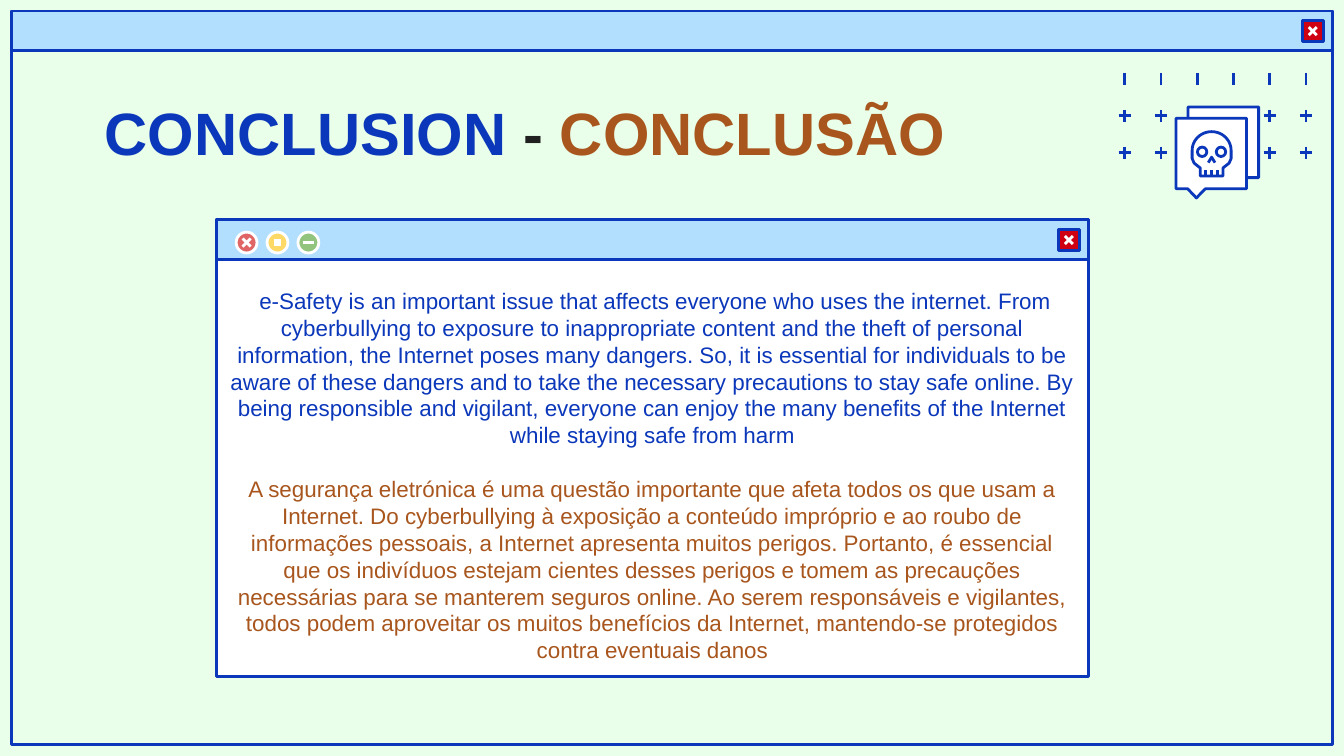
from dataclasses import dataclass
from math import cos, pi, sin

from lxml import etree
from pptx import Presentation
from pptx import util as u
from pptx.dml.color import RGBColor
from pptx.enum import shapes, text
from pptx.oxml.ns import qn


@dataclass(frozen=True)
class Theme:
    font: str = "Arial"
    title_size: float = 32
    body_size: float = 12
    paragraph_gap: float = 14.4
    line_width: float = 1.5
    background: str = "E9FFE9"
    blue: str = "0B37BA"
    sky: str = "B3DFFF"
    brown: str = "A8561D"
    dark: str = "212121"
    white: str = "FFFFFF"
    alert: str = "CF0011"
    red: str = "E06666"
    yellow: str = "FFD966"
    green: str = "93C47D"


THEME = Theme()
COLUMNS, ROWS = 100, 56.25
ENGLISH = (
    " e-Safety is an important issue that affects everyone who uses the internet. "
    "From cyberbullying to exposure to inappropriate content and the theft of personal "
    "information, the Internet poses many dangers. So, it is essential for individuals "
    "to be aware of these dangers and to take the necessary precautions to stay safe "
    "online. By being responsible and vigilant, everyone can enjoy the many benefits of "
    "the Internet while staying safe from harm"
)
PORTUGUESE = (
    "A segurança eletrónica é uma questão importante que afeta todos os que usam a "
    "Internet. Do cyberbullying à exposição a conteúdo impróprio e ao roubo de "
    "informações pessoais, a Internet apresenta muitos perigos. Portanto, é essencial "
    "que os indivíduos estejam cientes desses perigos e tomem as precauções necessárias "
    "para se manterem seguros online. Ao serem responsáveis e vigilantes, todos podem "
    "aproveitar os muitos benefícios da Internet, mantendo-se protegidos contra "
    "eventuais danos"
)


class SlideBuilder:
    def __init__(self, presentation, theme):
        self.theme = theme
        self.column = presentation.slide_width / COLUMNS
        self.row = presentation.slide_height / ROWS
        self.slide = presentation.slides.add_slide(presentation.slide_layouts[5])
        fill = self.slide.background.fill
        fill.solid()
        fill.fore_color.rgb = RGBColor.from_string(theme.background)

    def x(self, columns):
        return u.Emu(round(columns * self.column))

    def y(self, rows):
        return u.Emu(round(rows * self.row))

    def paint(self, shape, fill, line):
        shape.shadow.inherit = False
        if fill:
            shape.fill.solid()
            shape.fill.fore_color.rgb = RGBColor.from_string(fill)
        else:
            shape.fill.background()
        if line:
            shape.line.color.rgb = RGBColor.from_string(line)
            shape.line.width = u.Pt(self.theme.line_width)
        else:
            shape.line.fill.background()
        return shape

    def shape(self, kind, left, top, width, height, fill=None, line=None):
        shape = self.slide.shapes.add_shape(
            kind, self.x(left), self.y(top), self.x(width), self.y(height))
        return self.paint(shape, fill, line)

    def box(self, *place, **style):
        return self.shape(shapes.MSO_SHAPE.RECTANGLE, *place, **style)

    def circle(self, x, y, size, **style):
        return self.shape(
            shapes.MSO_SHAPE.OVAL, x - size / 2, y - size / 2, size, size, **style)

    def callout(self, left, top, size):
        shape = self.shape(
            shapes.MSO_SHAPE.RECTANGULAR_CALLOUT, left, top, size, size,
            fill=self.theme.white, line=self.theme.blue)
        shape.adjustments[0], shape.adjustments[1] = -0.21, 0.63

    def outline(self, points, closed=False, fill=None):
        placed = [(self.x(x), self.y(y)) for x, y in points]
        builder = self.slide.shapes.build_freeform(*placed[0])
        builder.add_line_segments(placed[1:], close=closed)
        self.paint(builder.convert_to_shape(), fill, self.theme.blue)

    def line(self, x1, y1, x2, y2, color):
        connector = self.slide.shapes.add_connector(
            shapes.MSO_CONNECTOR.STRAIGHT, self.x(x1), self.y(y1), self.x(x2), self.y(y2))
        connector.line.color.rgb = RGBColor.from_string(color)
        connector.line.width = u.Pt(self.theme.line_width)
        etree.SubElement(connector._element.spPr, qn("a:effectLst"))

    def cross(self, x, y, reach=0.3):
        for rise in (-reach, reach):
            self.line(x - reach, y - rise, x + reach, y + rise, self.theme.white)

    def window(self, left, top, width, height, fill=None):
        theme = self.theme
        body = self.box(left, top, width, height, fill=fill, line=theme.blue)
        self.box(left, top, width, 2.95, fill=theme.sky, line=theme.blue)
        close_left, close_top = left + width - 2.25, top + 0.72
        self.box(close_left, close_top, 1.55, 1.55, fill=theme.alert, line=theme.blue)
        self.cross(close_left + 0.78, close_top + 0.78)
        return body

    def style_run(self, run, size, color, bold=False):
        run.font.name = self.theme.font
        run.font.size = u.Pt(size)
        run.font.bold = bold
        run.font.color.rgb = RGBColor.from_string(color)

    def title(self, place, parts):
        title = self.slide.shapes.title
        left, top, width, height = place
        title.left, title.top = self.x(left), self.y(top)
        title.width, title.height = self.x(width), self.y(height)
        frame = title.text_frame
        frame.auto_size = text.MSO_AUTO_SIZE.NONE
        frame.vertical_anchor = text.MSO_ANCHOR.TOP
        frame.margin_left = frame.margin_right = self.x(1)
        frame.margin_top = frame.margin_bottom = self.y(1)
        paragraph = frame.paragraphs[0]
        paragraph.alignment = text.PP_ALIGN.LEFT
        for words, color in parts:
            run = paragraph.add_run()
            run.text = words
            self.style_run(run, self.theme.title_size, color, bold=True)

    def body_text(self, shape, parts):
        frame = shape.text_frame
        frame.word_wrap = True
        frame.vertical_anchor = text.MSO_ANCHOR.BOTTOM
        frame.margin_left = frame.margin_right = self.x(1)
        frame.margin_top = frame.margin_bottom = self.y(1)
        frame.text = "\n".join(words for words, _ in parts)
        for index, (paragraph, (_, color)) in enumerate(zip(frame.paragraphs, parts)):
            paragraph.alignment = text.PP_ALIGN.CENTER
            paragraph.space_before = u.Pt(self.theme.paragraph_gap if index else 0)
            self.style_run(paragraph.runs[0], self.theme.body_size, color)

    def plus_grid(self, left, top, column_count, row_count, reach=0.45):
        for row in range(row_count):
            for column in range(column_count):
                x, y = left + 2.7 * column, top + 2.75 * row
                self.line(x, y - reach, x, y + reach, self.theme.blue)
                if row:
                    self.line(x - reach, y, x + reach, y, self.theme.blue)

    def skull(self, x, y):
        theme = self.theme
        dome = [(x - 1.45 * cos(step * pi / 24), y - 1.4 * sin(step * pi / 24))
                for step in range(25)]
        jaw = [(1.45, 0.6), (1.3, 0.95), (0.85, 1.3), (0.85, 1.9)]
        right = [(x + dx, y + dy) for dx, dy in jaw]
        left = [(x - dx, y + dy) for dx, dy in reversed(jaw)]
        self.outline(dome + right + left, closed=True, fill=theme.white)
        for side in (-0.7, 0.7):
            self.circle(x + side, y + 0.1, 0.7, line=theme.blue)
        self.outline([(x - 0.25, y + 0.9), (x, y + 0.5), (x + 0.25, y + 0.9)])
        for tooth in (-0.45, 0, 0.45):
            self.line(x + tooth, y + 1.45, x + tooth, y + 1.9, theme.blue)

    def window_buttons(self, left, y, gap):
        theme = self.theme
        centers = [left + gap * index for index in range(3)]
        for x, color in zip(centers, (theme.red, theme.yellow, theme.green)):
            self.circle(x, y, 1.55, fill=color, line=theme.white)
        close, restore, minimise = centers
        self.cross(close, y)
        self.box(restore - 0.25, y - 0.25, 0.5, 0.5, fill=theme.white)
        self.line(minimise - 0.42, y, minimise + 0.42, y, theme.white)


def main():
    presentation = Presentation()
    presentation.slide_width = u.Inches(10)
    presentation.slide_height = presentation.slide_width * 9 // 16
    builder = SlideBuilder(presentation, THEME)
    builder.window(0.85, 0.82, 98.3, 54.6)
    builder.plus_grid(83.68, 5.87, 6, 3)
    for left, top in ((88.4, 7.97), (87.5, 8.8)):
        builder.callout(left, top, 5.25)
    builder.skull(90.15, 11.2)
    panel = builder.window(16.1, 16.36, 64.9, 34, fill=THEME.white)
    builder.body_text(panel, [(ENGLISH, THEME.blue), (PORTUGUESE, THEME.brown)])
    builder.title((6.8, 6.1, 72.7, 6.5), [
        ("CONCLUSION ", THEME.blue), ("- ", THEME.dark), ("CONCLUSÃO", THEME.brown)])
    builder.window_buttons(18.35, 18.05, 2.3)
    presentation.save("out.pptx")


if __name__ == "__main__":
    main()
